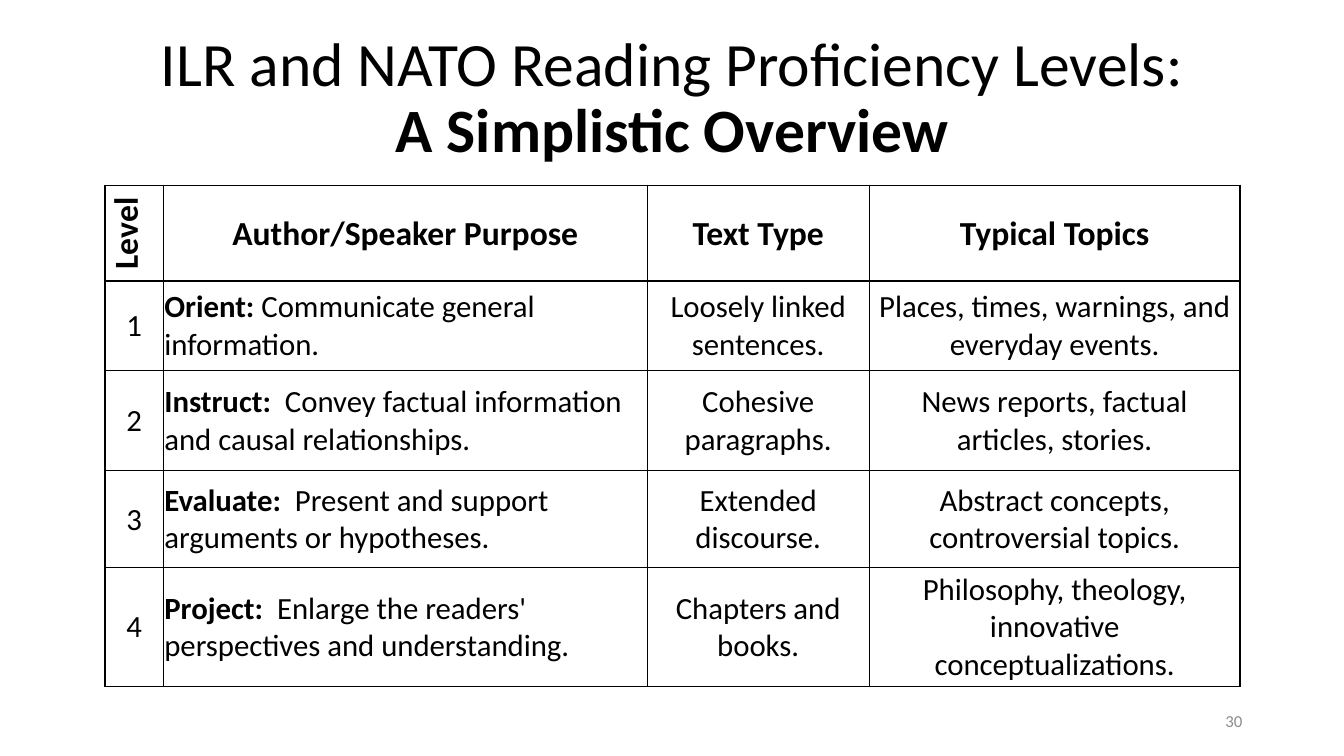
"""Build a slide that summarises reading proficiency levels in a table."""
from dataclasses import dataclass

from lxml import etree
from pptx import Presentation
from pptx.dml.color import RGBColor
from pptx.enum.text import MSO_ANCHOR, MSO_AUTO_SIZE, PP_ALIGN
from pptx.oxml.ns import qn
from pptx.slide import Slide
from pptx.table import _Cell
from pptx.text.text import _Paragraph
from pptx.util import Inches, Pt

CENTER, LEFT, RIGHT = PP_ALIGN.CENTER, PP_ALIGN.LEFT, PP_ALIGN.RIGHT
MIDDLE = MSO_ANCHOR.MIDDLE
NO_AUTOFIT = MSO_AUTO_SIZE.NONE
FONT = "Calibri"
COLORS = {"text": "000000", "border": "000000", "number": "8C8C8C"}
THIN, THICK = 0.5, 1.5
COLUMN_WIDTHS = (0.58, 4.8, 2.2, 3.68)
ROW_HEIGHTS = (0.95, 0.88, 1, 0.96, 1.18)
HEADERS = ("Level", "Author/Speaker Purpose", "Text Type", "Typical Topics")


@dataclass(frozen=True)
class Level:
    """One proficiency level."""

    number: int
    purpose: str
    description: str
    text_type: str
    topics: str


LEVELS = (
    Level(1, "Orient:", " Communicate general information.",
          "Loosely linked sentences.", "Places, times, warnings, and everyday events."),
    Level(2, "Instruct:  ", "Convey factual information and causal relationships.",
          "Cohesive paragraphs.", "News reports, factual articles, stories."),
    Level(3, "Evaluate:  ", "Present and support arguments or hypotheses.",
          "Extended discourse.", "Abstract concepts, controversial topics."),
    Level(4, "Project:  ", "Enlarge the readers' perspectives and understanding.",
          "Chapters and books.", "Philosophy, theology, innovative conceptualizations."),
)


def add_run(paragraph: _Paragraph, text: str, size: float,
            bold: bool = False, color: str = "text") -> None:
    """Append one formatted run."""
    run = paragraph.add_run()
    run.text = text
    run.font.name = FONT
    run.font.size = Pt(size)
    run.font.bold = bold
    run.font.color.rgb = RGBColor.from_string(COLORS[color])


def set_borders(cell: _Cell, widths: dict[str, float]) -> None:
    """Draw the cell's borders, given widths in points by side."""
    properties = cell._tc.get_or_add_tcPr()
    for index, (side, width) in enumerate(widths.items()):
        line = etree.Element(qn(f"a:ln{side}"), w=str(Pt(width)))
        fill = etree.SubElement(line, qn("a:solidFill"))
        etree.SubElement(fill, qn("a:srgbClr"), val=COLORS["border"])
        properties.insert(index, line)


def format_cell(cell: _Cell, row: int, column: int) -> None:
    """Set margins, anchor, fill and borders for a grid position."""
    cell.margin_left = cell.margin_right = cell.margin_top = Inches(0.01)
    cell.margin_bottom = 0
    cell.vertical_anchor = MIDDLE
    cell.fill.background()
    last_row, last_column = len(ROW_HEIGHTS) - 1, len(COLUMN_WIDTHS) - 1
    set_borders(cell, {
        "L": THICK if column == 0 else THIN,
        "R": THICK if column == last_column else THIN,
        "T": THICK if row in (0, 1) else THIN,
        "B": THICK if row in (0, last_row) else THIN,
    })


def add_title(slide: Slide) -> None:
    """Fill the title placeholder."""
    title = slide.shapes.title
    title.left, title.top = Inches(0.92), Inches(0.4)
    title.width, title.height = Inches(11.5), Inches(1.18)
    frame = title.text_frame
    frame.auto_size = NO_AUTOFIT
    frame.vertical_anchor = MIDDLE
    paragraph = frame.paragraphs[0]
    paragraph.alignment = CENTER
    paragraph.line_spacing = 0.9
    add_run(paragraph, "ILR and NATO Reading Proficiency Levels:", 44)
    paragraph.add_line_break()
    add_run(paragraph, "A Simplistic Overview", 44, bold=True)


def add_level_table(slide: Slide) -> None:
    """Add the table of levels."""
    table = slide.shapes.add_table(
        len(ROW_HEIGHTS), len(COLUMN_WIDTHS), Inches(1.04), Inches(1.84),
        Inches(sum(COLUMN_WIDTHS)), Inches(sum(ROW_HEIGHTS))).table
    table.first_row = table.horz_banding = False
    for column, width in zip(table.columns, COLUMN_WIDTHS):
        column.width = Inches(width)
    for row, height in zip(table.rows, ROW_HEIGHTS):
        row.height = Inches(height)

    contents = [[((header, True),) for header in HEADERS]]
    for level in LEVELS:
        contents.append([
            ((str(level.number), False),),
            ((level.purpose, True), (level.description, False)),
            ((level.text_type, False),),
            ((level.topics, False),),
        ])
    for row, cells in enumerate(contents):
        for column, runs in enumerate(cells):
            cell = table.cell(row, column)
            format_cell(cell, row, column)
            paragraph = cell.text_frame.paragraphs[0]
            paragraph.alignment = LEFT if row and column == 1 else CENTER
            for text, bold in runs:
                add_run(paragraph, text, 22 if row else 24, bold)
    table.cell(0, 0)._tc.get_or_add_tcPr().set("vert", "vert270")


def add_slide_number(slide: Slide) -> None:
    """Add the slide number at the lower right."""
    box = slide.shapes.add_textbox(Inches(9.42), Inches(6.95), Inches(3), Inches(0.4))
    frame = box.text_frame
    frame.word_wrap = True
    frame.vertical_anchor = MIDDLE
    paragraph = frame.paragraphs[0]
    paragraph.alignment = RIGHT
    add_run(paragraph, "30", 12, color="number")


def main() -> None:
    """Build and save the presentation."""
    presentation = Presentation()
    presentation.slide_width, presentation.slide_height = Inches(13.33), Inches(7.5)
    slide = presentation.slides.add_slide(presentation.slide_layouts[5])
    add_title(slide)
    add_level_table(slide)
    add_slide_number(slide)
    presentation.save("out.pptx")


if __name__ == "__main__":
    main()
